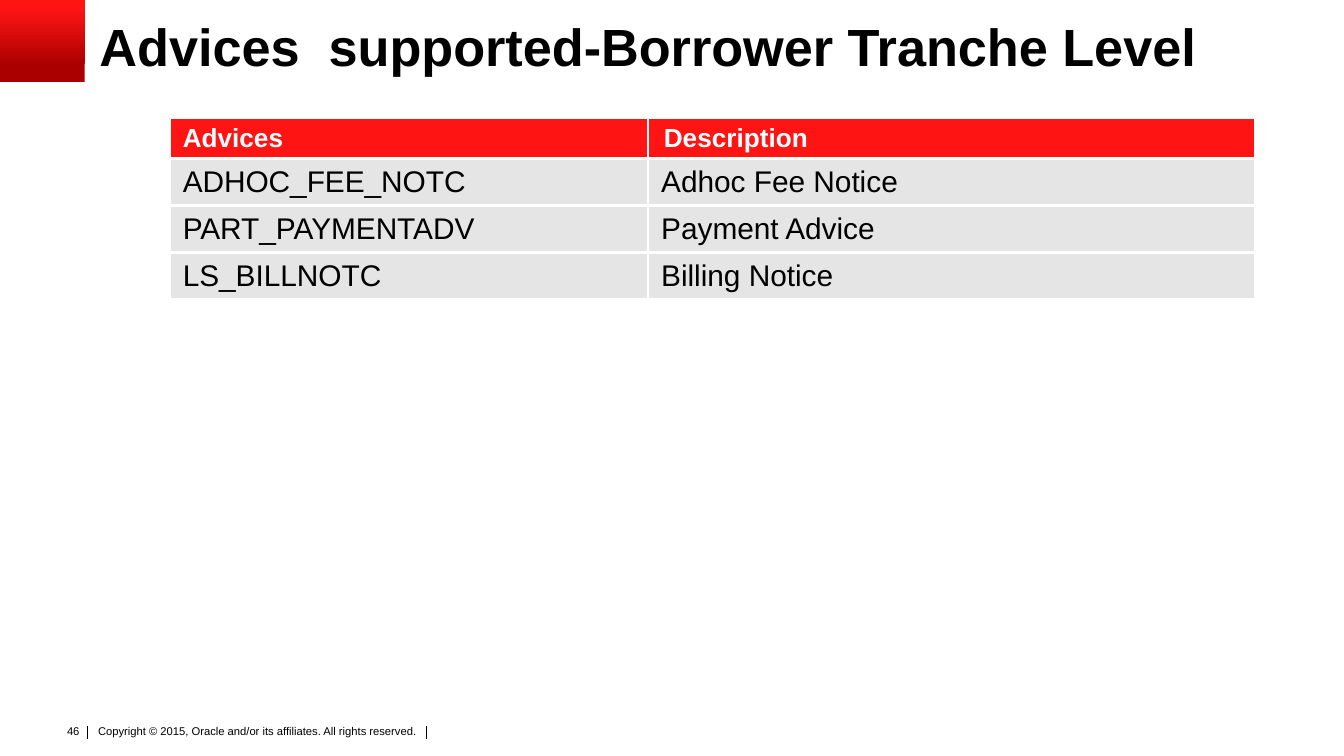
from dataclasses import dataclass

from lxml import etree
from pptx import Presentation
from pptx.dml.color import RGBColor
from pptx.enum.shapes import MSO_CONNECTOR, MSO_SHAPE
from pptx.enum.text import MSO_ANCHOR, MSO_AUTO_SIZE, PP_ALIGN
from pptx.oxml.ns import qn
from pptx.util import Inches, Pt


@dataclass(frozen=True)
class Theme:
    font: str = "Arial"
    text: str = "000000"
    white: str = "FFFFFF"
    red: str = "FF1414"
    dark_red: str = "AA0000"
    row: str = "E5E5E5"
    title_size: int = 28
    head_size: int = 14
    body_size: int = 16
    footer_size: int = 6


T = Theme()
SLIDE_W = 10
SLIDE_H = SLIDE_W * 9 / 16
ROWS = [
    ("Advices", "Description"),
    ("ADHOC_FEE_NOTC", "Adhoc Fee Notice"),
    ("PART_PAYMENTADV", "Payment Advice"),
    ("LS_BILLNOTC", "Billing Notice"),
]


def rgb(value):
    return RGBColor.from_string(value)


def write(tf, text, size, color=T.text, bold=False, align=PP_ALIGN.LEFT, spacing=None):
    p = tf.paragraphs[0]
    p.alignment = align
    p.line_spacing = spacing
    r = p.add_run()
    r.text = text
    r.font.name = T.font
    r.font.size = Pt(size)
    r.font.bold = bold
    r.font.color.rgb = rgb(color)


def set_frame(tf, x_inset, y_inset, anchor=MSO_ANCHOR.TOP, wrap=True):
    tf.margin_left = tf.margin_right = Inches(x_inset)
    tf.margin_top = tf.margin_bottom = Inches(y_inset)
    tf.vertical_anchor = anchor
    tf.word_wrap = wrap
    tf.auto_size = MSO_AUTO_SIZE.NONE


def add_corner(s, x, y, w, h):
    sp = s.shapes.add_shape(MSO_SHAPE.RECTANGLE, Inches(x), Inches(y), Inches(w), Inches(h))
    sp.shadow.inherit = False
    sp.line.fill.background()
    sp.fill.gradient()
    sp.fill.gradient_angle = 90
    stops = [(0.2, T.dark_red), (0.9, T.red)]
    for stop, (position, color) in zip(sp.fill.gradient_stops, stops):
        stop.position = position
        stop.color.rgb = rgb(color)


def add_title(s, text, x, y, w, h):
    sp = s.shapes.title
    sp.left, sp.top, sp.width, sp.height = (Inches(v) for v in (x, y, w, h))
    set_frame(sp.text_frame, 0, 0, MSO_ANCHOR.MIDDLE)
    write(sp.text_frame, text, T.title_size, bold=True, spacing=0.9)


def add_borders(cell, color, width):
    tc_pr = cell._tc.get_or_add_tcPr()
    for side in ("lnL", "lnR", "lnT", "lnB"):
        ln = etree.SubElement(tc_pr, qn(f"a:{side}"), w=str(Pt(width)))
        fill = etree.SubElement(ln, qn("a:solidFill"))
        etree.SubElement(fill, qn("a:srgbClr"), val=color)


def add_advice_table(s, rows, x, y, col_widths, head_h, row_h):
    height = head_h + row_h * (len(rows) - 1)
    table = s.shapes.add_table(
        len(rows), len(col_widths), Inches(x), Inches(y),
        Inches(sum(col_widths)), Inches(height),
    ).table
    table.horz_banding = False
    for col, width in zip(table.columns, col_widths):
        col.width = Inches(width)
    for i, values in enumerate(rows):
        head = i == 0
        table.rows[i].height = Inches(head_h if head else row_h)
        for j, text in enumerate(values):
            cell = table.cell(i, j)
            indent = 0.02 if head and j else 0
            cell.margin_left = Inches(0.1 + indent)
            cell.margin_top = cell.margin_bottom = Inches(0.03)
            cell.vertical_anchor = MSO_ANCHOR.MIDDLE
            add_borders(cell, T.white, 1.5)
            cell.fill.solid()
            cell.fill.fore_color.rgb = rgb(T.red if head else T.row)
            write(
                cell.text_frame, text,
                T.head_size if head else T.body_size,
                color=T.white if head else T.text, bold=head,
            )


def add_footer(s, number, notice, x, y):
    box = s.shapes.add_textbox(Inches(x), Inches(y), Inches(0.3), Inches(0.2))
    set_frame(box.text_frame, 0.1, 0.05, wrap=False)
    write(box.text_frame, number, T.footer_size, align=PP_ALIGN.RIGHT)

    box = s.shapes.add_textbox(Inches(x + 0.3), Inches(y + 0.03), Inches(2.74), Inches(0.24))
    set_frame(box.text_frame, 0.04, 0.02)
    write(box.text_frame, notice, T.footer_size)

    for dx in (0.26, 2.78):
        line = s.shapes.add_connector(
            MSO_CONNECTOR.STRAIGHT,
            Inches(x + dx), Inches(y + 0.06), Inches(x + dx), Inches(y + 0.16),
        )
        line.line.color.rgb = rgb(T.text)
        line.line.width = Pt(0.5)
        etree.SubElement(line._element.spPr, qn("a:effectLst"))


def main():
    prs = Presentation()
    prs.slide_width, prs.slide_height = Inches(SLIDE_W), Inches(SLIDE_H)
    s = prs.slides.add_slide(prs.slide_layouts[5])
    add_footer(
        s, "46",
        "Copyright © 2015, Oracle and/or its affiliates. All rights reserved.",
        0.39, 5.34,
    )
    add_corner(s, 0, 0, 0.63, 0.61)
    add_title(s, "Advices  supported-Borrower Tranche Level", 0.74, 0.15, 9, 0.44)
    add_advice_table(s, ROWS, 1.26, 0.88, (3.56, 4.52), 0.3, 0.35)
    prs.save("out.pptx")


if __name__ == "__main__":
    main()
